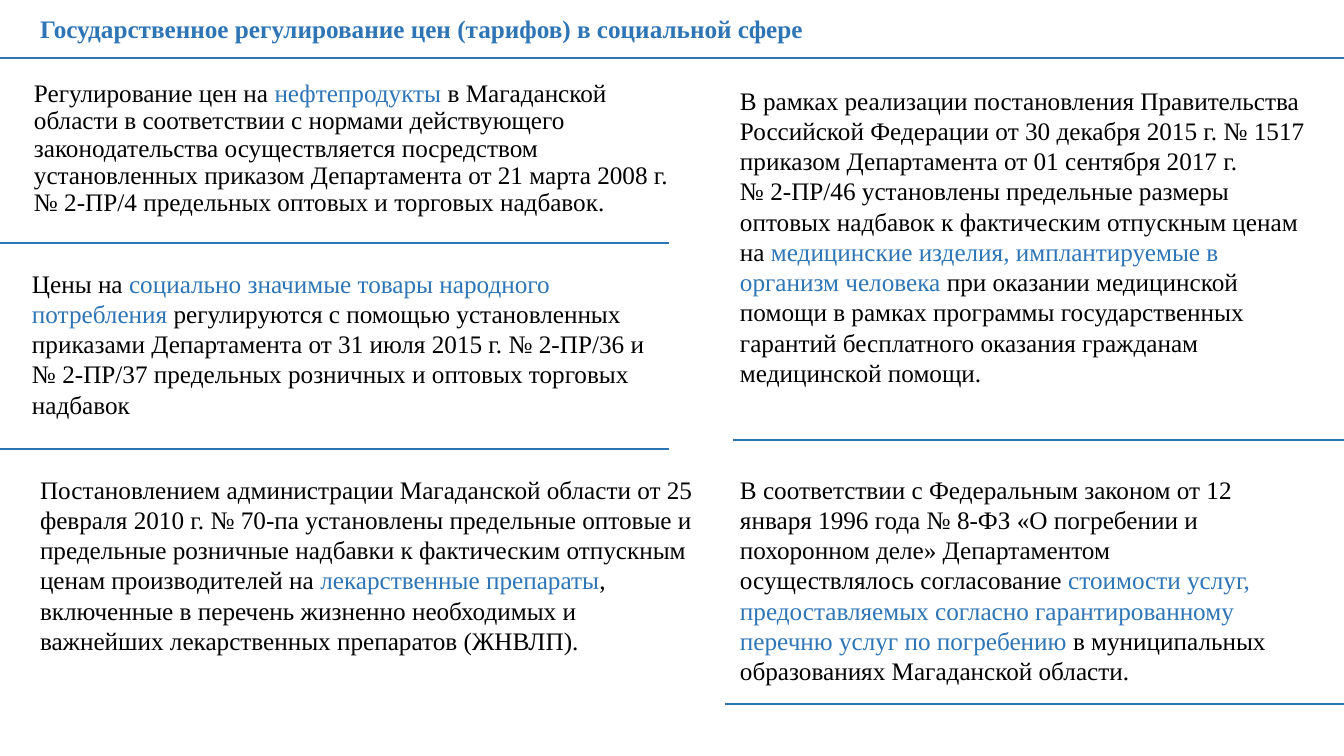
from lxml.etree import SubElement
from pptx import Presentation
from pptx.dml.color import RGBColor
from pptx.enum.shapes import MSO_CONNECTOR
from pptx.enum.text import MSO_ANCHOR, MSO_AUTO_SIZE, PP_ALIGN
from pptx.oxml.ns import qn
from pptx.util import Pt

WIDE, HIGH = 1344, 756
SCALE = 12192000 / WIDE
BLUE, BLACK = "2E75B6", "000000"


def px(n):
    return round(n * SCALE)


def hue(code):
    return RGBColor.from_string(code)


def write(frame, text, size=18, font="Times New Roman", color=BLACK,
          accent=BLUE, bold=False, space=1.0, pad=(10, 5)):
    """Fill a frame: newlines split paragraphs, *stars* mark the accent."""
    frame.word_wrap = True
    frame.auto_size = MSO_AUTO_SIZE.NONE
    frame.vertical_anchor = MSO_ANCHOR.TOP
    frame.margin_left = frame.margin_right = px(pad[0])
    frame.margin_top = frame.margin_bottom = px(pad[1])
    for i, line in enumerate(text.split("\n")):
        para = frame.add_paragraph() if i else frame.paragraphs[0]
        para.alignment = PP_ALIGN.LEFT
        para.line_spacing = space
        for j, part in enumerate(line.split("*")):
            run = para.add_run()
            run.text = part
            run.font.name = font
            run.font.size = Pt(size)
            run.font.bold = bold
            run.font.color.rgb = hue(accent if j % 2 else color)


class Page:
    def __init__(self, deck):
        self.slide = deck.slides.add_slide(deck.slide_layouts[5])
        self.shapes = self.slide.shapes
        self.ink = BLUE

    def title(self, text, x, y, w, h):
        head = self.shapes.title
        head.left, head.top, head.width, head.height = map(px, (x, y, w, h))
        write(head.text_frame, text, color=self.ink, bold=True)

    def text(self, text, x, y, w, h, **style):
        box = self.shapes.add_textbox(*map(px, (x, y, w, h)))
        write(box.text_frame, text, accent=self.ink, **style)

    def rule(self, x, y, end):
        line = self.shapes.add_connector(
            MSO_CONNECTOR.STRAIGHT, px(x), px(y), px(end), px(y))
        line.line.color.rgb = hue(self.ink)
        line.line.width = Pt(1)
        SubElement(line._element.spPr, qn("a:effectLst"))


def main():
    deck = Presentation()
    deck.slide_width, deck.slide_height = px(WIDE), px(HIGH)
    page = Page(deck)

    # Heading
    page.title("Государственное регулирование цен (тарифов) в социальной сфере",
               30, 8, 1251, 40)

    # Rules between the sections
    for x, y, end in ((0, 58, WIDE), (0, 243, 669), (0, 449, 669),
                      (733, 440, WIDE), (725, 704, WIDE)):
        page.rule(x, y, end)

    # Left column
    page.text("Регулирование цен на *нефтепродукты* в Магаданской области "
              "в соответствии с нормами действующего законодательства "
              "осуществляется посредством установленных приказом Департамента "
              "от 21 марта 2008 г. № 2-ПР/4 предельных оптовых и торговых "
              "надбавок.", 27, 74, 656, 160, space=0.9, pad=(7, 7))
    page.text("Цены на *социально значимые товары народного потребления* "
              "регулируются с помощью установленных приказами Департамента "
              "от 31 июля 2015 г. № 2-ПР/36 и\n"
              "№ 2-ПР/37 предельных розничных и оптовых торговых надбавок",
              22, 263, 675, 163)
    page.text("Постановлением администрации Магаданской области от 25 февраля "
              "2010 г. № 70-па установлены предельные оптовые и предельные "
              "розничные надбавки к фактическим отпускным ценам производителей "
              "на *лекарственные препараты*, включенные в перечень жизненно "
              "необходимых и важнейших лекарственных препаратов (ЖНВЛП).",
              30, 469, 675, 194)

    # Right column
    page.text("В рамках реализации постановления Правительства Российской "
              "Федерации от 30 декабря 2015 г. № 1517 приказом Департамента "
              "от 01 сентября 2017 г.\n"
              "№ 2-ПР/46 установлены предельные размеры оптовых надбавок "
              "к фактическим отпускным ценам на *медицинские изделия, "
              "имплантируемые в организм человека* при оказании медицинской "
              "помощи в рамках программы государственных гарантий бесплатного "
              "оказания гражданам медицинской помощи.", 730, 80, 592, 316)
    page.text("В соответствии с Федеральным законом от 12 января 1996 года "
              "№ 8-ФЗ «О погребении и похоронном деле» Департаментом "
              "осуществлялось согласование *стоимости услуг, предоставляемых "
              "согласно гарантированному перечню услуг по погребению* "
              "в муниципальных образованиях Магаданской области.",
              730, 469, 570, 254)

    deck.save("out.pptx")


if __name__ == "__main__":
    main()
